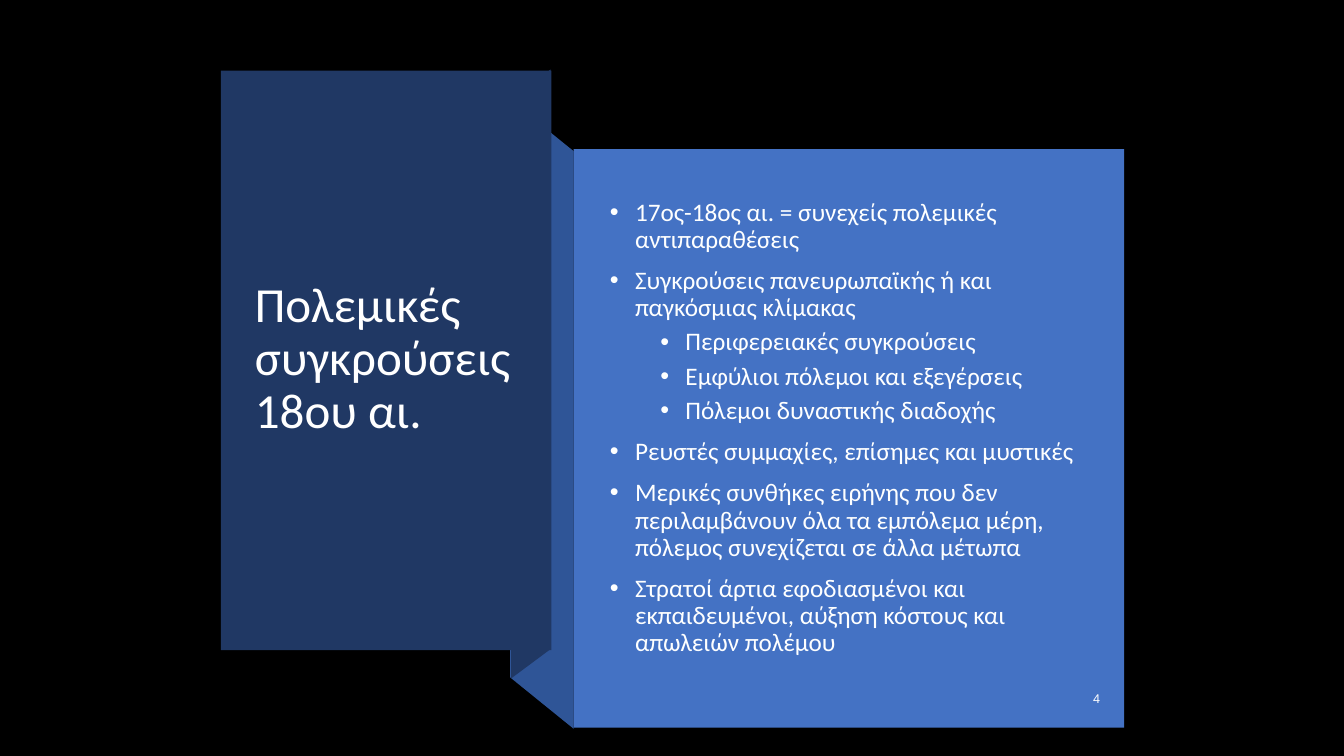
from lxml import etree
from pptx import Presentation
from pptx.dml.color import RGBColor
from pptx.enum import shapes, text
from pptx.oxml import ns
from pptx.util import Inches, Pt

BLACK = RGBColor(0x00, 0x00, 0x00)
WHITE = RGBColor(0xFF, 0xFF, 0xFF)
PALE = RGBColor(0xFE, 0xFF, 0xFF)
NAVY = RGBColor(0x20, 0x38, 0x64)
MID = RGBColor(0x2F, 0x55, 0x97)
BLUE = RGBColor(0x44, 0x72, 0xC4)

TITLE = "Πολεμικές συγκρούσεις 18ου αι."
POINTS = [
    (0, "17ος-18ος αι. = συνεχείς πολεμικές αντιπαραθέσεις"),
    (0, "Συγκρούσεις πανευρωπαϊκής ή και παγκόσμιας κλίμακας"),
    (1, "Περιφερειακές συγκρούσεις"),
    (1, "Εμφύλιοι πόλεμοι και εξεγέρσεις"),
    (1, "Πόλεμοι δυναστικής διαδοχής"),
    (0, "Ρευστές συμμαχίες, επίσημες και μυστικές"),
    (0, "Μερικές συνθήκες ειρήνης που δεν περιλαμβάνουν όλα τα εμπόλεμα μέρη, "
        "πόλεμος συνεχίζεται σε άλλα μέτωπα"),
    (0, "Στρατοί άρτια εφοδιασμένοι και εκπαιδευμένοι, "
        "αύξηση κόστους και απωλειών πολέμου"),
]
FOLDS = [
    (MID, [(5.69, 7.23), (5.06, 6.72), (5.06, 0.99), (5.69, 1.5)]),
    (NAVY, [(5.07, 6.73), (5.07, 0.98), (5.46, 0.69), (5.46, 6.44)]),
]
PANELS = [
    (NAVY, (2.19, 0.7, 3.28, 5.75)),
    (BLUE, (5.69, 1.48, 5.46, 5.74)),
]

deck = Presentation()
deck.slide_width, deck.slide_height = Inches(13.33), Inches(7.5)
slide = deck.slides.add_slide(deck.slide_layouts[6])
slide.background.fill.solid()
slide.background.fill.fore_color.rgb = BLACK


def paint(shape, color):
    shape.shadow.inherit = False
    shape.fill.solid()
    shape.fill.fore_color.rgb = color
    shape.line.fill.background()


def add_text(box, lines, face, size, color):
    frame = slide.shapes.add_textbox(*map(Inches, box)).text_frame
    frame.word_wrap = True
    frame.vertical_anchor = text.MSO_ANCHOR.MIDDLE
    frame.text = "\n".join(lines)
    for par in frame.paragraphs:
        for run in par.runs:
            run.font.name = face
            run.font.size = Pt(size)
            run.font.color.rgb = color
    return frame.paragraphs


def add_bullet(par, level):
    par.level = level
    props = par._p.get_or_add_pPr()
    props.set("marL", str(Inches(0.25 + 0.5 * level)))
    props.set("indent", str(Inches(-0.25)))
    etree.SubElement(props, ns.qn("a:buFont")).set("typeface", "Arial")
    etree.SubElement(props, ns.qn("a:buChar")).set("char", "•")


for color, points in FOLDS:
    start, *rest = [(Inches(x), Inches(y)) for x, y in points]
    path = slide.shapes.build_freeform(*start)
    path.add_line_segments(rest, close=True)
    paint(path.convert_to_shape(), color)

for color, box in PANELS:
    panel = slide.shapes.add_shape(shapes.MSO_SHAPE.RECTANGLE, *map(Inches, box))
    paint(panel, color)

title = add_text((2.43, 1.07, 2.78, 4.99), [TITLE], "Calibri", 35, WHITE)
title[0].line_spacing = 0.9

body = add_text((5.95, 1.88, 4.88, 4.74), [line for _, line in POINTS],
                "Calibri", 18, PALE)
for index, (par, (level, _)) in enumerate(zip(body, POINTS)):
    add_bullet(par, level)
    par.line_spacing = 0.9
    par.space_before = Pt((5 if level else 10) if index else 0)

number = add_text((10.45, 6.75, 0.56, 0.35), ["4"], "Arial", 9, WHITE)
number[0].alignment = text.PP_ALIGN.RIGHT

deck.save("out.pptx")
